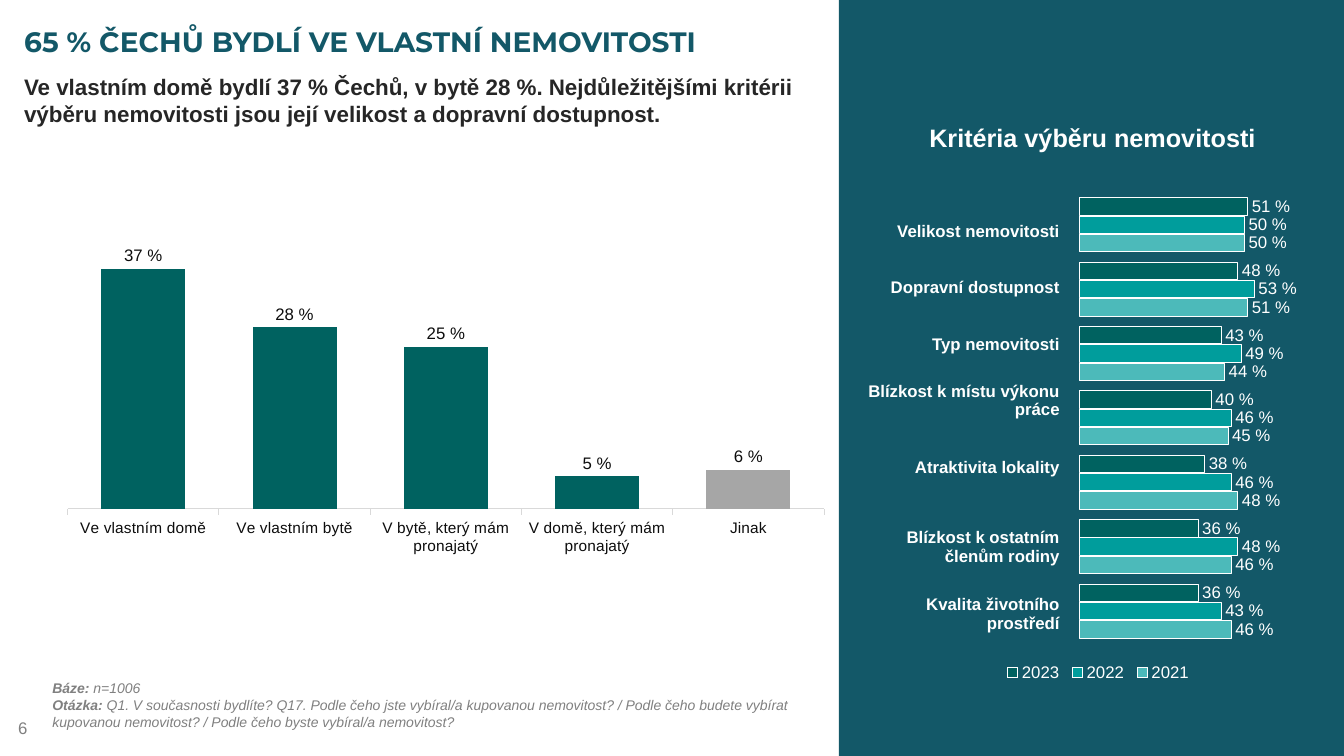
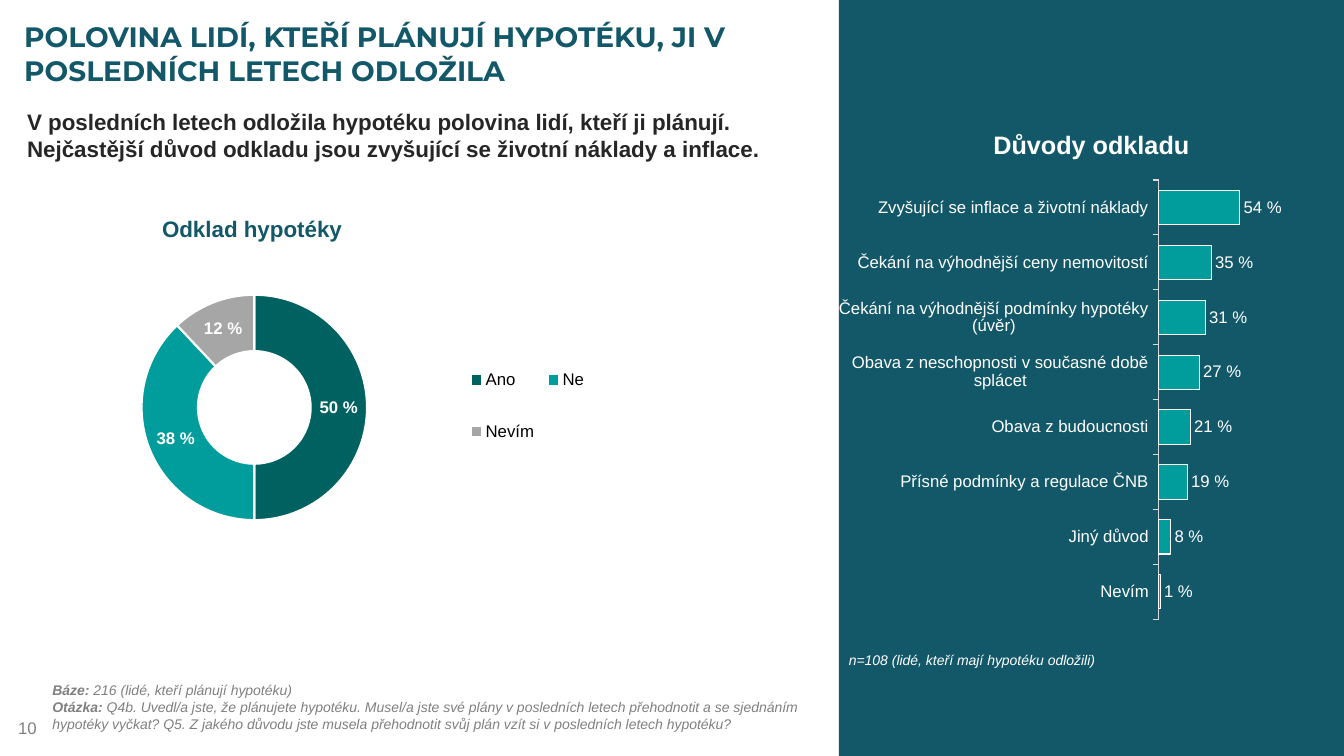
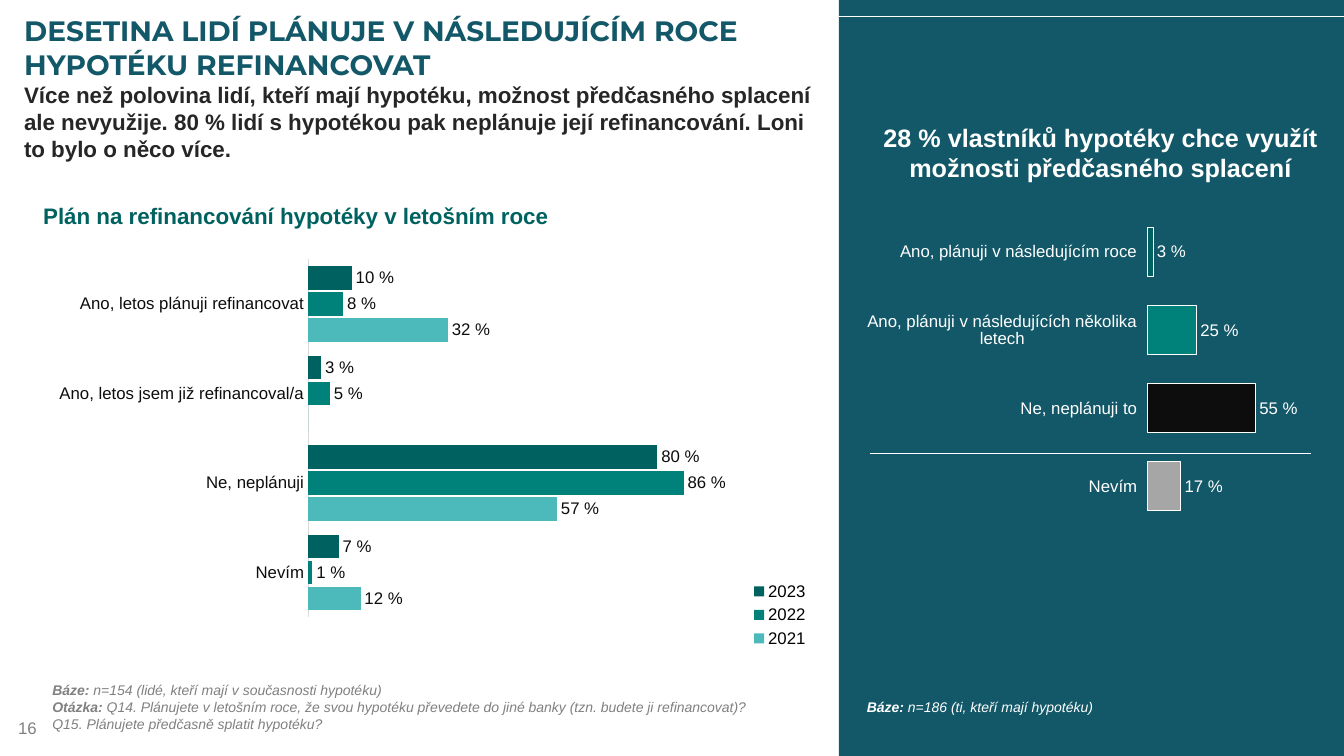
from lxml.etree import SubElement
from pptx import Presentation
from pptx.chart.data import CategoryChartData
from pptx.dml.color import RGBColor
from pptx.enum.chart import XL_CHART_TYPE, XL_LABEL_POSITION, XL_LEGEND_POSITION, XL_TICK_MARK
from pptx.enum.shapes import MSO_CONNECTOR, MSO_SHAPE
from pptx.enum.text import MSO_ANCHOR, MSO_AUTO_SIZE, PP_ALIGN
from pptx.oxml import parse_xml
from pptx.oxml.ns import nsdecls, qn
from pptx.util import Inches, Pt

COLORS = {
    "petrol": "135868", "dark": "006260", "green": "00827A", "teal": "009D9C",
    "light": "4CBABA", "gray": "A6A6A6", "note": "808080", "ink": "262626",
    "black": "0D0D0D", "legend": "000000", "axis": "D9D9D9", "white": "FFFFFF",
}
BAND_LEFT, BAND_WIDTH, SLIDE_HEIGHT = 8.32, 5.01, 7.5
PERCENT = '0\\ "%";0;'
NO_STYLE = "{2D5ABB26-0587-4C30-8999-92F81FD0307C}"


def rgb(name):
    """Return the named colour."""
    return RGBColor.from_string(COLORS[name])


def inches(box):
    """Turn a box of numbers into lengths."""
    return [Inches(length) for length in box]


def style(font, size, color, bold=False, italic=False, face="Arial"):
    """Format a font."""
    font.name, font.size = face, Pt(size)
    font.bold, font.italic = bold, italic
    font.color.rgb = rgb(color)


def write(slide, box, paragraphs, size, color, bold=False, italic=False,
          align=PP_ALIGN.LEFT, inset=(0.1, 0.05), anchor=MSO_ANCHOR.TOP):
    """Place paragraphs, each a string or a list of (text, bold) runs."""
    frame = slide.shapes.add_textbox(*inches(box)).text_frame
    frame.word_wrap, frame.vertical_anchor = True, anchor
    frame.margin_left = frame.margin_right = Inches(inset[0])
    frame.margin_top = frame.margin_bottom = Inches(inset[1])
    for number, content in enumerate(paragraphs):
        paragraph = frame.add_paragraph() if number else frame.paragraphs[0]
        paragraph.alignment = align
        for text, weight in [(content, bold)] if isinstance(content, str) else content:
            run = paragraph.add_run()
            run.text = text
            style(run.font, size, color, weight, italic)


def add_page(prs, number, title, title_height, lead, lead_box, note, note_top):
    """Add a slide with title, lead, source note, page number and side band."""
    slide = prs.slides.add_slide(prs.slide_layouts[5])
    heading = slide.shapes.title
    heading.left, heading.top, heading.width, heading.height = inches(
        (0.14, 0.14, 8.18, title_height))
    frame = heading.text_frame
    frame.text = title
    frame.auto_size, frame.vertical_anchor = MSO_AUTO_SIZE.NONE, MSO_ANCHOR.MIDDLE
    frame.paragraphs[0].alignment = PP_ALIGN.LEFT
    style(frame.paragraphs[0].runs[0].font, 20, "petrol", True, face="Montserrat")
    write(slide, (0.05, 7.02, 3.11, 0.4), [number], 12, "note",
          inset=(0.13, 0.07), anchor=MSO_ANCHOR.MIDDLE)
    write(slide, lead_box, [lead], 16, "ink", True)
    write(slide, (0.52, note_top, 7.8, 0.5), note, 10, "note", italic=True, inset=(0, 0))
    band = slide.shapes.add_shape(
        MSO_SHAPE.RECTANGLE, *inches((BAND_LEFT, 0, BAND_WIDTH, SLIDE_HEIGHT)))
    band.shadow.inherit = False
    band.fill.solid()
    band.fill.fore_color.rgb = rgb("petrol")
    band.line.fill.background()
    return slide


def add_rule(slide, left, right, top, width):
    """Draw a white horizontal line."""
    rule = slide.shapes.add_connector(
        MSO_CONNECTOR.STRAIGHT, *inches((left, top, right, top)))
    rule.line.color.rgb, rule.line.width = rgb("white"), Pt(width)
    SubElement(rule._element.spPr, qn("a:effectLst"))


def add_labels(slide, box, heights, labels, size, align):
    """Add a one-column table of white labels without fill or grid."""
    table = slide.shapes.add_table(len(labels), 1, *inches(box)).table
    table.first_row = table.horz_banding = False
    table._tbl.tblPr.find(qn("a:tableStyleId")).text = NO_STYLE
    for row, height, label in zip(table.rows, heights, labels):
        row.height = Inches(height)
        cell = row.cells[0]
        cell.fill.background()
        cell.vertical_anchor = MSO_ANCHOR.MIDDLE
        cell.margin_left = cell.margin_right = cell.margin_top = Inches(0.01)
        cell.margin_bottom = 0
        cell.text_frame.text = label
        paragraph = cell.text_frame.paragraphs[0]
        paragraph.alignment = align
        style(paragraph.runs[0].font, size, "white", True)


def fix_layout(parent, index, box, inner=False):
    """Give a plot area or legend a fixed place as fractions of its chart."""
    for former in parent.findall(qn("c:layout")):
        parent.remove(former)
    target = '<c:layoutTarget val="inner"/>' if inner else ""
    modes = "".join(f'<c:{axis}Mode val="edge"/>' for axis in "xy")
    sizes = "".join(f'<c:{key} val="{value}"/>' for key, value in zip("xywh", box))
    parent.insert(index, parse_xml(
        f'<c:layout {nsdecls("c")}><c:manualLayout>{target}{modes}{sizes}'
        "</c:manualLayout></c:layout>"))


def add_chart(slide, kind, box, plot_box, categories, series, label_color, legend=None):
    """Add a chart with value labels; series maps names to values."""
    data = CategoryChartData()
    data.categories = categories
    for name, values in series.items():
        data.add_series(name, values)
    chart = slide.shapes.add_chart(kind, *inches(box), data).chart
    chart.has_title = False
    style(chart.font, 12, label_color)
    fix_layout(chart._chartSpace.chart.plotArea, 0, plot_box, inner=True)
    chart.has_legend = legend is not None
    if legend:
        position, legend_box, color = legend
        chart.legend.position = position
        chart.legend.include_in_layout = False
        style(chart.legend.font, 12, color)
        fix_layout(chart.legend._element, 1, legend_box)
    for values in chart.plots[0].series:
        labels = values.data_labels
        labels.show_value = True
        labels.number_format, labels.number_format_is_linked = PERCENT, False
        style(labels.font, 12, label_color, kind == XL_CHART_TYPE.DOUGHNUT)
        if kind != XL_CHART_TYPE.DOUGHNUT:
            labels.position = XL_LABEL_POSITION.OUTSIDE_END
    return chart


def paint(part, color, outline=0):
    """Fill a series or a point and outline it in white."""
    part.format.fill.solid()
    part.format.fill.fore_color.rgb = rgb(color)
    if outline:
        part.format.line.color.rgb = rgb("white")
        part.format.line.width = Pt(outline)


def add_bars(slide, box, plot_box, categories, series, colors, top, ink="black",
             kind=XL_CHART_TYPE.BAR_CLUSTERED, points=None, outline=0, gap=60,
             overlap=0, axis_size=12, tick=XL_TICK_MARK.OUTSIDE, axis_line=True,
             legend=None):
    """Add a bar chart with a hidden value axis running from 0 to top."""
    chart = add_chart(slide, kind, box, plot_box, categories, series, ink, legend)
    plot = chart.plots[0]
    plot.vary_by_categories = False
    plot.gap_width, plot.overlap = gap, overlap
    scale, axis = chart.value_axis, chart.category_axis
    scale.minimum_scale, scale.maximum_scale = 0, top
    scale.has_major_gridlines = scale.visible = False
    axis.major_tick_mark = tick
    style(axis.tick_labels.font, axis_size, ink)
    if axis_line:
        axis.format.line.color.rgb, axis.format.line.width = rgb("axis"), Pt(0.75)
    else:
        axis.format.line.fill.background()
    for values, color in zip(plot.series, colors):
        values.invert_if_negative = False
        paint(values, color, outline)
        for index, point_color in (points or {}).items():
            paint(values.points[index], point_color, outline)
    return chart


def add_ring(slide, box, plot_box, categories, values, colors, legend):
    """Add a doughnut chart."""
    chart = add_chart(slide, XL_CHART_TYPE.DOUGHNUT, box, plot_box, categories,
                      {"Series 1": values}, "white", legend)
    for index, color in enumerate(colors):
        paint(chart.plots[0].series[0].points[index], color, 1.5)


def housing_slide(prs):
    """Build the slide on housing and the criteria for choosing it."""
    slide = add_page(
        prs, "6", "65 % ČECHŮ BYDLÍ VE VLASTNÍ NEMOVITOSTI", 0.53,
        "Ve vlastním domě bydlí 37 % Čechů, v bytě 28 %. Nejdůležitějšími kritérii "
        "výběru nemovitosti jsou její velikost a dopravní dostupnost.",
        (0.14, 0.68, 8.18, 0.7),
        [[("Báze: ", True), ("n=1006", False)],
         [("Otázka: ", True),
          ("Q1. V současnosti bydlíte? Q17. Podle čeho jste vybíral/a kupovanou "
           "nemovitost? / Podle čeho budete vybírat kupovanou nemovitost? / Podle "
           "čeho byste vybíral/a nemovitost?", False)]], 6.74)
    add_bars(slide, (0.39, 2.45, 7.8, 3.31), (0.036, 0.001, 0.962, 0.783),
             ["Ve vlastním domě", "Ve vlastním bytě", "V bytě, který mám pronajatý",
              "V domě, který mám pronajatý", "Jinak"],
             {"Series 1": [37, 28, 25, 5, 6]}, ["dark"], 40,
             kind=XL_CHART_TYPE.COLUMN_CLUSTERED, points={4: "gray"},
             gap=80, overlap=-27, axis_size=11)
    write(slide, (8.59, 1.16, 4.49, 0.4), ["Kritéria výběru nemovitosti"], 18,
          "white", True, align=PP_ALIGN.CENTER)
    criteria = ["Velikost nemovitosti", "Dopravní dostupnost", "Typ nemovitosti",
                "Blízkost k místu výkonu práce", "Atraktivita lokality",
                "Blízkost k ostatním členům rodiny", "Kvalita životního prostředí"]
    add_labels(slide, (8.48, 2.01, 2.04, 4.37),
               [0.56, 0.56, 0.56, 0.56, 0.78, 0.78, 0.56], criteria, 12, PP_ALIGN.RIGHT)
    ranking = add_bars(
        slide, (9.85, 1.69, 3.48, 5.14), (0.271, 0.043, 0.755, 0.87),
        [str(number) for number in range(1, 8)],
        {"2021": [46, 46, 48, 45, 44, 51, 50],
         "2022": [43, 48, 46, 46, 49, 53, 50],
         "2023": [36, 36, 38, 40, 43, 48, 51]},
        ["light", "teal", "dark"], 80, "white", outline=0.75, overlap=-5,
        legend=(XL_LEGEND_POSITION.BOTTOM, (0.02, 0.94, 0.56, 0.06), "white"))
    ranking.category_axis.visible = False


def delay_slide(prs):
    """Build the slide on postponed mortgages."""
    slide = add_page(
        prs, "10",
        "POLOVINA LIDÍ, KTEŘÍ PLÁNUJÍ HYPOTÉKU, JI V POSLEDNÍCH LETECH ODLOŽILA", 0.78,
        "V posledních letech odložila hypotéku polovina lidí, kteří ji plánují. "
        "Nejčastější důvod odkladu jsou zvyšující se životní náklady a inflace.",
        (0.17, 1.02, 8.18, 0.78),
        [[("Báze: ", True), ("216 (lidé, kteří plánují hypotéku)", False)],
         [("Otázka: ", True),
          ("Q4b. Uvedl/a jste, že plánujete hypotéku. Musel/a jste své plány v "
           "posledních letech přehodnotit a se sjednáním hypotéky vyčkat? Q5. Z jakého "
           "důvodu jste musela přehodnotit svůj plán vzít si v posledních letech "
           "hypotéku?", False)]], 6.76)
    write(slide, (0.69, 2.09, 3.62, 0.37), ["Odklad hypotéky"], 16, "petrol", True,
          align=PP_ALIGN.CENTER)
    add_ring(slide, (0.52, 2.33, 6.46, 3.5), (0.096, 0.17, 0.428, 0.639),
             ["Ano", "Ne", "Nevím"], [50, 38, 12], ["dark", "teal", "gray"],
             (XL_LEGEND_POSITION.RIGHT, (0.63, 0.29, 0.2, 0.39), "legend"))
    add_bars(slide, (8.32, 1.58, 4.9, 4.8), (0.646, 0.043, 0.305, 0.908),
             ["Nevím", "Jiný důvod", "Přísné podmínky a regulace ČNB",
              "Obava z budoucnosti", "Obava z neschopnosti v současné době splácet",
              "Čekání na výhodnější podmínky hypotéky (úvěr)",
              "Čekání na výhodnější ceny nemovitostí",
              "Zvyšující se inflace a životní náklady"],
             {"Series 1": [1, 8, 19, 21, 27, 31, 35, 54]}, ["teal"], 100, "white",
             outline=0.75)
    write(slide, (BAND_LEFT, 6.41, BAND_WIDTH, 0.27),
          ["n=108 (lidé, kteří mají hypotéku odložili)"], 10, "white", italic=True)
    add_labels(slide, (BAND_LEFT, 1.17, BAND_WIDTH, 0.54), [0.54], ["Důvody odkladu"],
               18, PP_ALIGN.CENTER)


def refinancing_slide(prs):
    """Build the slide on refinancing and early repayment."""
    slide = add_page(
        prs, "16", "DESETINA LIDÍ PLÁNUJE V NÁSLEDUJÍCÍM ROCE HYPOTÉKU REFINANCOVAT", 0.66,
        "Více než polovina lidí, kteří mají hypotéku, možnost předčasného splacení ale "
        "nevyužije. 80 % lidí s hypotékou pak neplánuje její refinancování. Loni to "
        "bylo o něco více.",
        (0.14, 0.76, 8.14, 0.94),
        [[("Báze: ", True), ("n=154 (lidé, kteří mají v současnosti hypotéku)", False)],
         [("Otázka: ", True),
          ("Q14. Plánujete v letošním roce, že svou hypotéku převedete do jiné banky "
           "(tzn. budete ji refinancovat)?", False)],
         "Q15. Plánujete předčasně splatit hypotéku?"], 6.76)
    write(slide, (8.59, 1.16, 4.65, 0.71),
          ["28 % vlastníků hypotéky chce využít možnosti předčasného splacení"], 18,
          "white", True, align=PP_ALIGN.CENTER)
    repayment = add_bars(
        slide, (8.51, 1.96, 4.82, 3.41), (0.615, 0.046, 0.405, 0.908),
        ["Ano, plánuji v následujícím roce", "Ano, plánuji v následujících několika letech",
         "Ne, neplánuji to", "Nevím"],
        {"Series 1": [3, 25, 55, 17]}, ["dark"], 100, "white",
        points={1: "green", 2: "black", 3: "gray"}, outline=0.75, axis_line=False)
    repayment.category_axis.reverse_order = True
    add_rule(slide, 8.63, 13, 4.5, 0.5)
    write(slide, (0.33, 1.96, 5.6, 0.37),
          ["Plán na refinancování hypotéky v letošním roce"], 16, "dark", True)
    write(slide, (8.5, 6.88, 4, 0.44),
          [[("Báze: ", True), ("n=186 (ti, kteří mají hypotéku)", False)]], 10,
          "white", italic=True)
    add_rule(slide, BAND_LEFT, BAND_LEFT + BAND_WIDTH, 0.16, 0.25)
    add_bars(slide, (0.2, 2.33, 7.89, 4.19), (0.362, 0.058, 0.494, 0.847),
             ["Nevím", "Ne, neplánuji", "Ano, letos jsem již refinancoval/a",
              "Ano, letos plánuji refinancovat"],
             {"2021": [12, 57, 0, 32], "2022": [1, 86, 5, 8], "2023": [7, 80, 3, 10]},
             ["light", "green", "dark"], 90, overlap=-11, tick=XL_TICK_MARK.NONE,
             legend=(XL_LEGEND_POSITION.RIGHT, (0.91, 0.81, 0.09, 0.18), "legend"))


def main():
    """Build and save the presentation."""
    prs = Presentation()
    prs.slide_width, prs.slide_height = Inches(13.33), Inches(SLIDE_HEIGHT)
    for build in (housing_slide, delay_slide, refinancing_slide):
        build(prs)
    prs.save("out.pptx")


if __name__ == "__main__":
    main()
